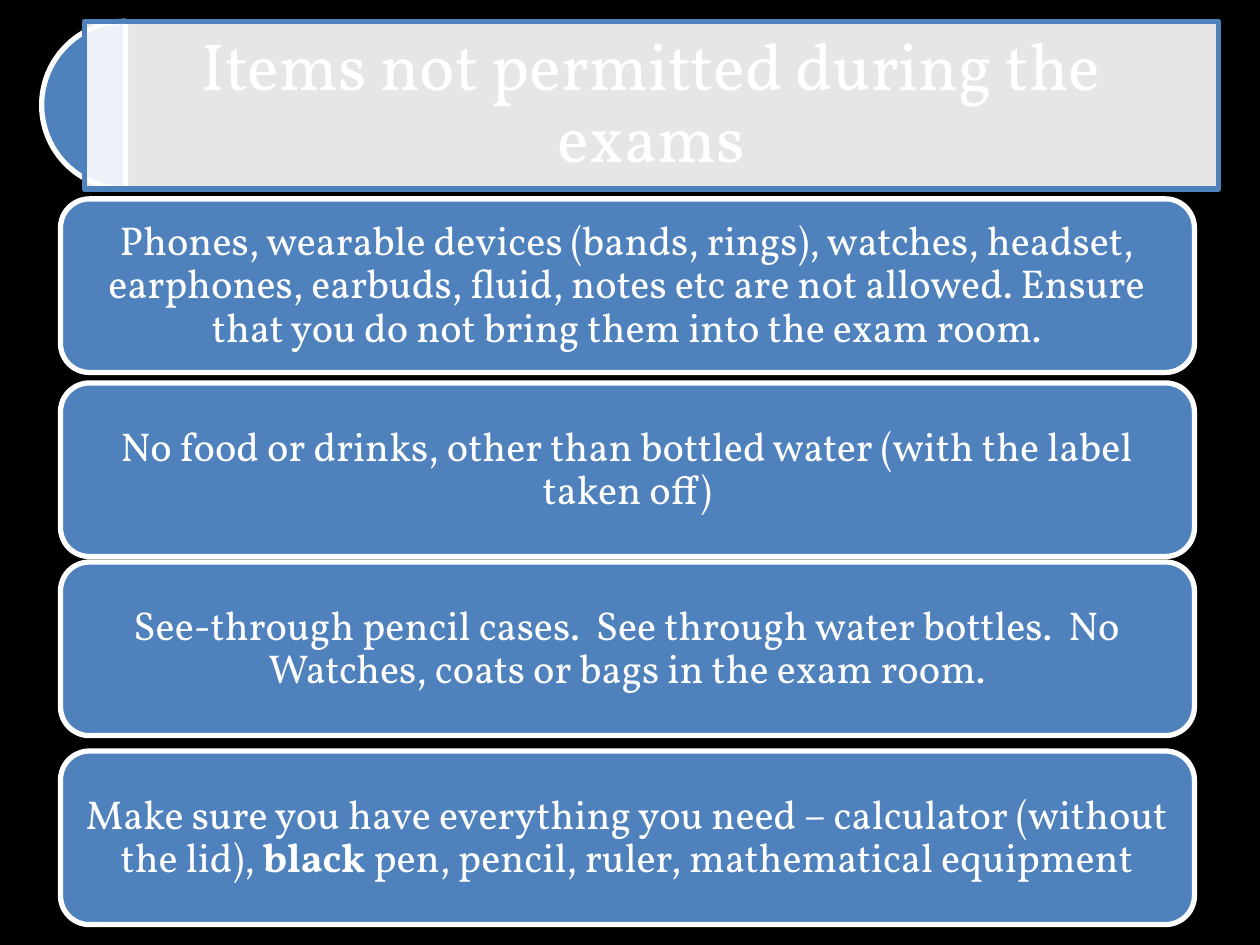
"""Build the slide that lists items not permitted during the exams."""
from lxml import etree
from pptx import Presentation
from pptx.dml.color import RGBColor
from pptx.enum.shapes import MSO_SHAPE
from pptx.enum.text import MSO_ANCHOR, MSO_AUTO_SIZE, PP_ALIGN
from pptx.oxml.ns import qn
from pptx.util import Cm, Pt

ROUNDED = MSO_SHAPE.ROUNDED_RECTANGLE
PIE = MSO_SHAPE.PIE
CENTER = PP_ALIGN.CENTER
MIDDLE = MSO_ANCHOR.MIDDLE
NO_AUTOFIT = MSO_AUTO_SIZE.NONE

COLOURS = {"background": "000000", "blue": "4F81BD", "white": "FFFFFF"}
FONT = "Vollkorn"
TITLE = "Items not permitted during the exams"
RULES = [
    (4.01, [("Phones, wearable devices (bands, rings), watches, headset, "
             "earphones, earbuds, fluid, notes etc are not allowed. Ensure "
             "that you do not bring them into the exam room.", False)]),
    (7.72, [("No food or drinks, other than bottled water "
             "(with the label taken off)", False)]),
    (11.33, [("See-through pencil cases.  See through water bottles.  "
              "No Watches, coats or bags in the exam room.", False)]),
    (15.14, [("Make sure you have everything you need – calculator "
              "(without the lid), ", False),
             ("black", True),
             (" pen, pencil, ruler, mathematical equipment", False)]),
]


def colour(name):
    """Return the named colour."""
    return RGBColor.from_string(COLOURS[name])


def apply(target, values):
    """Set every attribute of a format dict on the target."""
    for name, value in values.items():
        setattr(target, name, value)


def paint(shape, fill, line):
    """Give a shape a solid fill and a 3 pt outline."""
    shape.fill.solid()
    shape.fill.fore_color.rgb = colour(fill)
    shape.line.color.rgb = colour(line)
    shape.line.width = Pt(3)


def write(shape, spans, size, inset):
    """Write centred white spans into a shape."""
    frame = shape.text_frame
    apply(frame, {"word_wrap": True, "auto_size": NO_AUTOFIT,
                  "vertical_anchor": MIDDLE,
                  "margin_left": Cm(inset), "margin_right": Cm(inset),
                  "margin_top": Cm(inset), "margin_bottom": Cm(inset)})
    para = frame.paragraphs[0]
    apply(para, {"alignment": CENTER, "line_spacing": 0.9})
    for text, bold in spans:
        span = para.add_run()
        span.text = text
        apply(span.font, {"name": FONT, "size": Pt(size), "bold": bold})
        span.font.color.rgb = colour("white")


def add_blue_shape(page, kind, left, top, width, height):
    """Add a blue shape with a white outline, placed in centimetres."""
    shape = page.shapes.add_shape(kind, Cm(left), Cm(top), Cm(width), Cm(height))
    shape.shadow.inherit = False
    paint(shape, "blue", "white")
    return shape


def add_rule(page, top, spans):
    """Add one rounded card that holds an exam rule."""
    card = add_blue_shape(page, ROUNDED, 1.22, top, 22.86, 3.5)
    write(card, spans, 23, 0.25)


def add_heading(page):
    """Add the half disc and the translucent title panel over it."""
    disc = add_blue_shape(page, PIE, 0.84, 0.43, 3.38, 3.38)
    disc.adjustments[0] = 54
    disc.adjustments[1] = 162
    title = page.shapes.title
    apply(title, {"left": Cm(1.7), "top": Cm(0.43),
                  "width": Cm(22.86), "height": Cm(3.38)})
    paint(title, "white", "blue")
    tint = title.element.spPr.find(qn("a:solidFill")).find(qn("a:srgbClr"))
    etree.SubElement(tint, qn("a:alpha")).set("val", "90000")
    write(title, [(TITLE, False)], 38, 0.41)
    title.element.getparent().append(title.element)


def main():
    """Build and save the deck."""
    deck = Presentation()
    apply(deck, {"slide_width": Cm(25.4), "slide_height": Cm(19.05)})
    page = deck.slides.add_slide(deck.slide_layouts[5])
    page.background.fill.solid()
    page.background.fill.fore_color.rgb = colour("background")
    for top, spans in RULES:
        add_rule(page, top, spans)
    add_heading(page)
    deck.save("out.pptx")


if __name__ == "__main__":
    main()
